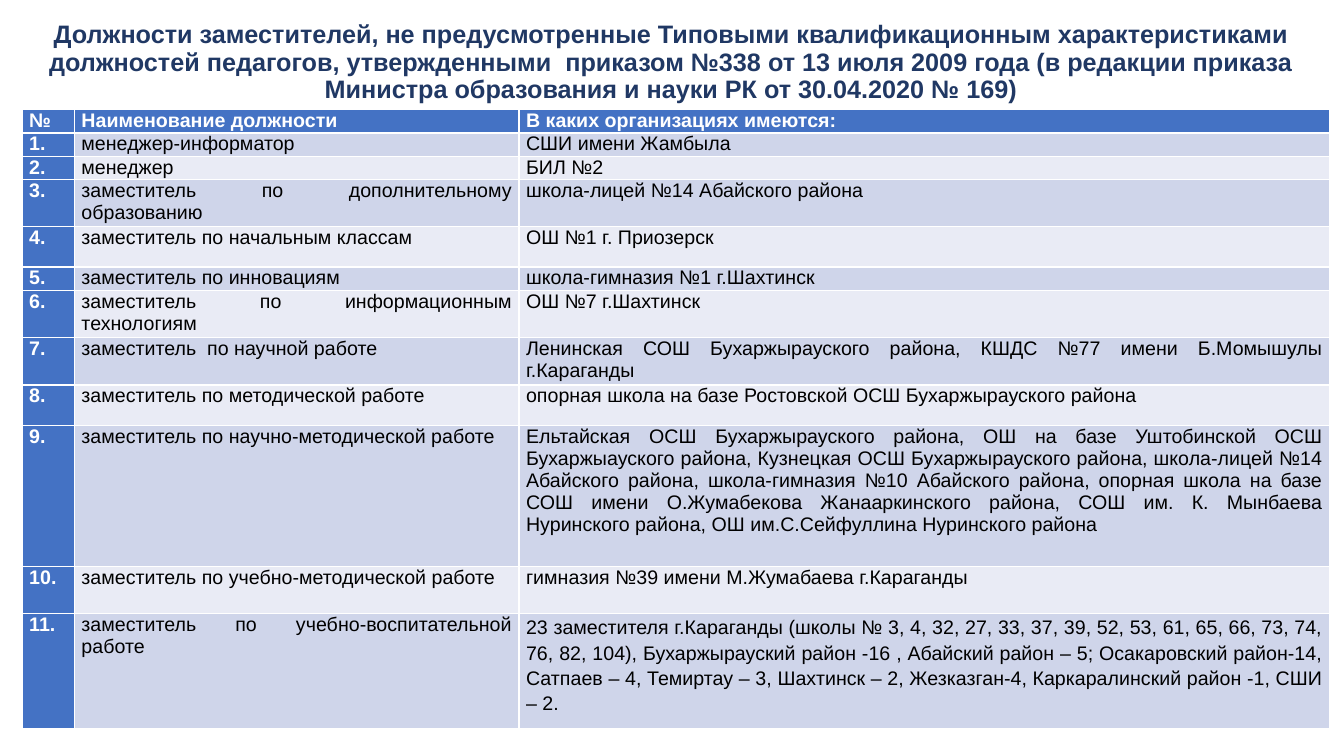
from pptx import Presentation
from pptx.dml.color import RGBColor
from pptx.enum.text import MSO_ANCHOR, PP_ALIGN
from pptx.util import Inches, Pt

COLORS = {
    "title": "203864", "accent": "4472C4", "on_accent": "FFFFFF",
    "odd": "CFD5EA", "even": "E9EBF5", "text": "000000",
}
FONT = "Arial"
TITLE = (
    "Должности заместителей, не предусмотренные Типовыми квалификационным "
    "характеристиками должностей педагогов, утвержденными  приказом №338 "
    "от 13 июля 2009 года (в редакции приказа Министра образования и науки РК "
    "от 30.04.2020 № 169)"
)
HEADER = ("№", "Наименование должности", "В каких организациях имеются:")

# Position, organisations, row height in inches
POSITIONS = [
    ("менеджер-информатор", "СШИ имени Жамбыла", 0.23),
    ("менеджер", "БИЛ №2", 0.23),
    ("заместитель по дополнительному образованию",
     "школа-лицей №14 Абайского района", 0.47),
    ("заместитель по начальным классам", "ОШ №1 г. Приозерск", 0.4),
    ("заместитель по инновациям", "школа-гимназия №1 г.Шахтинск", 0.23),
    ("заместитель по информационным технологиям", "ОШ №7 г.Шахтинск", 0.47),
    ("заместитель  по научной работе",
     "Ленинская СОШ Бухаржырауского района, КШДС №77 имени Б.Момышулы "
     "г.Караганды", 0.47),
    ("заместитель по методической работе",
     "опорная школа на базе Ростовской ОСШ Бухаржырауского района", 0.4),
    ("заместитель по научно-методической работе",
     "Ельтайская ОСШ Бухаржырауского района, ОШ на базе Уштобинской ОСШ "
     "Бухаржыауского района, Кузнецкая ОСШ Бухаржырауского района, "
     "школа-лицей №14 Абайского района, школа-гимназия №10 Абайского района, "
     "опорная школа на базе СОШ имени О.Жумабекова Жанааркинского района, "
     "СОШ им. К. Мынбаева Нуринского района, ОШ им.С.Сейфуллина Нуринского "
     "района", 1.4),
    ("заместитель по учебно-методической работе",
     "гимназия №39 имени М.Жумабаева г.Караганды", 0.47),
    ("заместитель по учебно-воспитательной работе",
     "23 заместителя г.Караганды (школы № 3, 4, 32, 27, 33, 37, 39, 52, 53, "
     "61, 65, 66, 73, 74, 76, 82, 104), Бухаржырауский район -16 , Абайский "
     "район – 5; Осакаровский район-14, Сатпаев – 4, Темиртау – 3, Шахтинск – 2, "
     "Жезказган-4, Каркаралинский район -1, СШИ – 2.", 1.14),
]
HEADER_HEIGHT = 0.23
COLUMN_SHARES = (0.04, 0.34, 0.62)


def rgb(name):
    return RGBColor.from_string(COLORS[name])


def add_text(p, text, size, color, bold, align):
    p.alignment = align
    r = p.add_run()
    r.text = text
    r.font.name, r.font.size, r.font.bold = FONT, Pt(size), bold
    r.font.color.rgb = rgb(color)


def place_title(s, left, top, width, height):
    sp = s.shapes.title
    sp.left, sp.top, sp.width, sp.height = map(Inches, (left, top, width, height))
    tf = sp.text_frame
    tf.word_wrap = True
    tf.vertical_anchor = MSO_ANCHOR.TOP
    tf.margin_top = Inches(0.03)
    p = tf.paragraphs[0]
    p.line_spacing = 0.9
    add_text(p, TITLE, 18, "title", True, PP_ALIGN.CENTER)


def fill_cell(cell, text, fill, heading):
    cell.fill.solid()
    cell.fill.fore_color.rgb = rgb(fill)
    cell.margin_left = cell.margin_right = Inches(0.07)
    cell.margin_top = cell.margin_bottom = 0
    color = "on_accent" if heading else "text"
    add_text(cell.text_frame.paragraphs[0], text, 14, color, heading, PP_ALIGN.JUSTIFY)


def place_table(s, left, top, width, height):
    rows = [HEADER] + [(f"{n}.", name, places)
                       for n, (name, places, _) in enumerate(POSITIONS, 1)]
    heights = [HEADER_HEIGHT] + [h for _, _, h in POSITIONS]
    table = s.shapes.add_table(len(rows), len(HEADER), Inches(left), Inches(top),
                               Inches(width), Inches(height)).table
    table.first_col = True
    for column, share in zip(table.columns, COLUMN_SHARES):
        column.width = Inches(width * share)
    for i, (texts, row_height) in enumerate(zip(rows, heights)):
        table.rows[i].height = Inches(row_height)
        for j, text in enumerate(texts):
            heading = i == 0 or j == 0
            fill = "accent" if heading else "odd" if i % 2 else "even"
            fill_cell(table.cell(i, j), text, fill, heading)
    # The closing list of districts is set looser
    table.cell(len(rows) - 1, 2).text_frame.paragraphs[0].line_spacing = 1.15


def main():
    prs = Presentation()
    prs.slide_width, prs.slide_height = Inches(13.33), Inches(7.5)
    s = prs.slides.add_slide(prs.slide_layouts[5])
    place_title(s, 0.37, 0.19, 12.57, 1.13)
    place_table(s, 0.22, 1.09, 12.97, 6.15)
    prs.save("out.pptx")


if __name__ == "__main__":
    main()
